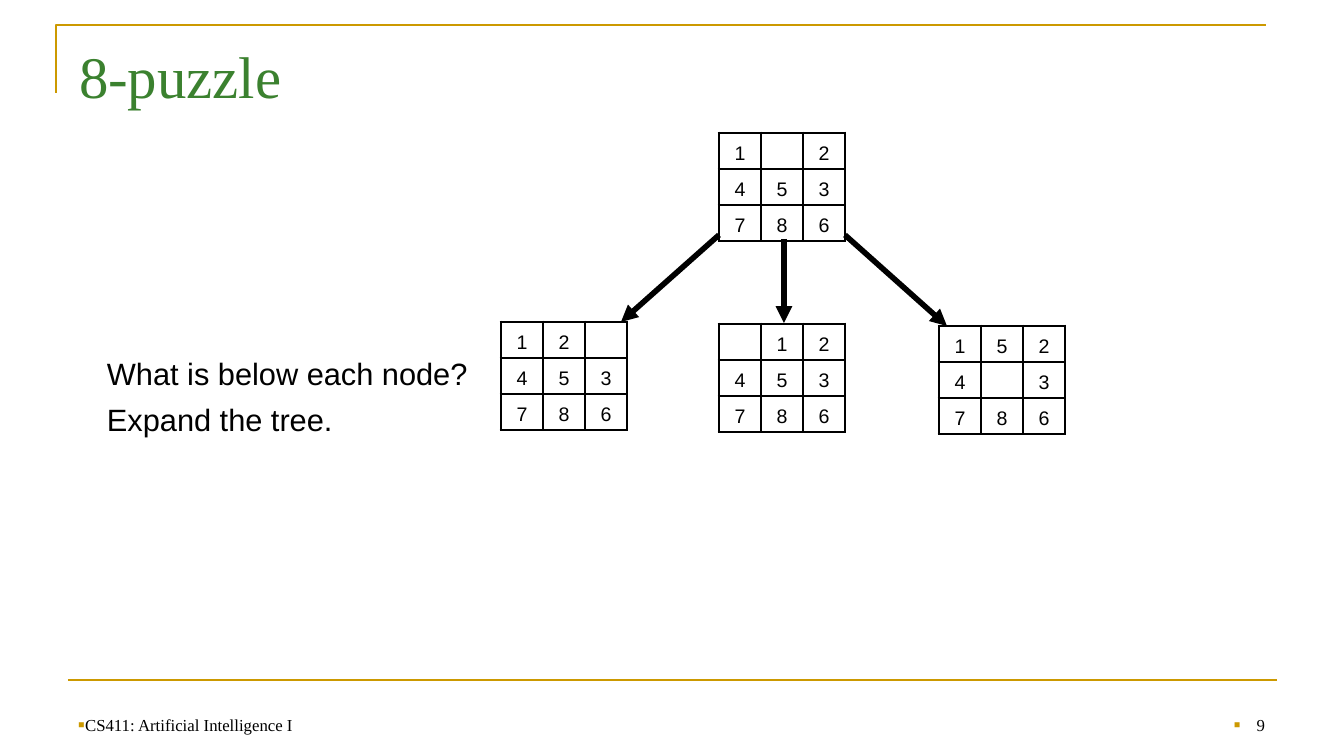
"""Build the 8-puzzle search tree slide."""
from dataclasses import dataclass

from lxml import etree
from pptx import Presentation
from pptx.dml.color import RGBColor
from pptx.enum.shapes import MSO_CONNECTOR
from pptx.enum.text import MSO_ANCHOR, PP_ALIGN
from pptx.oxml.ns import qn
from pptx.util import Pt

STRAIGHT = MSO_CONNECTOR.STRAIGHT
TOP, BOTTOM = MSO_ANCHOR.TOP, MSO_ANCHOR.BOTTOM
LEFT, CENTER, RIGHT = PP_ALIGN.LEFT, PP_ALIGN.CENTER, PP_ALIGN.RIGHT
SCALE = 914400 / 100.8
WIDE, HIGH = 1344, 756
TILE_W, TILE_H, SIDE = 42, 36, 3
THIN, THICK = 1, 2.25
COLORS = {"gold": "CC9900", "green": "3B812F", "black": "000000"}
FONTS = {
    "title": {"name": "Times New Roman", "size": Pt(42)},
    "foot": {"name": "Times New Roman", "size": Pt(12)},
    "body": {"name": "Arial", "size": Pt(22)},
    "tile": {"name": "Arial", "size": Pt(14)},
}
TILE_PARA = {"alignment": CENTER, "line_spacing": 1.24, "space_before": Pt(9)}


@dataclass
class Board:
    """A puzzle state, with a space for the empty tile."""
    left: int
    top: int
    rows: tuple[str, ...]


@dataclass
class Line:
    """A straight line, with or without an arrowhead."""
    start: tuple[int, int]
    end: tuple[int, int]
    color: str = "black"
    width: float = 4
    arrow: bool = True


@dataclass
class Label:
    """A text box with one style."""
    box: tuple[int, int, int, int]
    lines: tuple[str, ...]
    style: str
    color: str = "black"
    anchor: MSO_ANCHOR = TOP
    align: PP_ALIGN = LEFT
    inset: int = 5
    bullet: bool = False
    hang: int = 0


BOARDS = (
    Board(719, 133, ("1 2", "453", "786")),
    Board(939, 326, ("152", "4 3", "786")),
    Board(719, 324, (" 12", "453", "786")),
    Board(501, 322, ("12 ", "453", "786")),
)
LINES = (
    Line((68, 680), (1277, 680), "gold", 1.5, False),
    Line((845, 235), (947, 326)),
    Line((719, 235), (621, 322)),
    Line((784, 239), (784, 323)),
)
LABELS = (
    Label((69, 29, 1199, 125), ("8-puzzle",), "title", "green", inset=11),
    Label((68, 688, 423, 52), ("CS411: Artificial Intelligence I",), "foot",
          anchor=BOTTOM, bullet=True),
    Label((964, 688, 311, 52), ("9",), "foot", anchor=BOTTOM, align=RIGHT,
          bullet=True, hang=23),
    Label((97, 350, 405, 93), ("What is below each node?", "Expand the tree."),
          "body"),
)


def px(size: int) -> int:
    """Turn px into EMU."""
    return round(size * SCALE)


def tint(name: str) -> RGBColor:
    """Look up a colour."""
    return RGBColor.from_string(COLORS[name])


def assign(target, values: dict) -> None:
    """Set each named attribute."""
    for name, value in values.items():
        setattr(target, name, value)


def node(parent, tag: str, **attrs: str):
    """Add an XML child."""
    return etree.SubElement(parent, qn(f"a:{tag}"), attrs)


def write(para, text: str, style: str, color: str) -> None:
    """Add styled text to a paragraph."""
    run = para.add_run()
    run.text = text
    assign(run.font, FONTS[style])
    run.font.color.rgb = tint(color)


def mark(para, hang: int) -> None:
    """Give a paragraph a square bullet."""
    props = para._p.get_or_add_pPr()
    props.set("marL", str(px(hang)))
    props.set("indent", str(-px(hang)))
    node(node(props, "buClr"), "srgbClr", val=COLORS["gold"])
    node(props, "buSzPct", val="120000")
    node(props, "buFont", typeface="Arial")
    node(props, "buChar", char="▪")


def edge(cell, row: int, col: int) -> None:
    """Draw cell borders, thick on the outside."""
    props = cell._tc.get_or_add_tcPr()
    last = SIDE - 1
    outer = {"lnL": col == 0, "lnR": col == last,
             "lnT": row == 0, "lnB": row == last}
    for spot, (tag, thick) in enumerate(outer.items()):
        line = node(props, tag, w=str(Pt(THICK if thick else THIN)))
        node(node(line, "solidFill"), "srgbClr", val=COLORS["black"])
        props.insert(spot, line)


def draw_board(shapes, board: Board) -> None:
    """Draw a puzzle state as a table."""
    grid = shapes.add_table(SIDE, SIDE, px(board.left), px(board.top),
                            px(SIDE * TILE_W), px(SIDE * TILE_H)).table
    assign(grid, {"first_row": False, "horz_banding": False})
    for row, digits in enumerate(board.rows):
        grid.rows[row].height = px(TILE_H)
        grid.columns[row].width = px(TILE_W)
        for col, digit in enumerate(digits):
            cell = grid.cell(row, col)
            assign(cell, {"margin_left": px(9), "margin_right": px(9),
                          "margin_top": px(4), "margin_bottom": px(4)})
            cell.fill.background()
            edge(cell, row, col)
            para = cell.text_frame.paragraphs[0]
            assign(para, TILE_PARA)
            if digit.strip():
                write(para, digit, "tile", "black")
            else:
                node(para._p, "endParaRPr", sz="1400")


def draw_line(shapes, line: Line) -> None:
    """Draw a rule or an arrow."""
    link = shapes.add_connector(STRAIGHT, *map(px, line.start + line.end))
    link.line.color.rgb = tint(line.color)
    link.line.width = Pt(line.width)
    props = link._element.spPr
    if line.arrow:
        node(props.find(qn("a:ln")), "tailEnd", type="triangle")
    node(props, "effectLst")


def draw_label(shapes, label: Label) -> None:
    """Draw a text box."""
    frame = shapes.add_textbox(*map(px, label.box)).text_frame
    assign(frame, {"word_wrap": True, "vertical_anchor": label.anchor,
                   "margin_left": px(10), "margin_right": px(10),
                   "margin_top": px(label.inset), "margin_bottom": px(5)})
    for count, text in enumerate(label.lines):
        para = frame.add_paragraph() if count else frame.paragraphs[0]
        para.alignment = label.align
        if len(label.lines) > 1:
            para.space_before = Pt(6)
        if label.bullet:
            mark(para, label.hang)
        write(para, text, label.style, label.color)


def draw_frame(shapes) -> None:
    """Draw the gold corner around the title."""
    pen = shapes.build_freeform(px(56), px(93))
    pen.add_line_segments([(px(56), px(25)), (px(1266), px(25))], close=False)
    shape = pen.convert_to_shape()
    shape.shadow.inherit = False
    shape.fill.background()
    shape.line.color.rgb = tint("gold")
    shape.line.width = Pt(1.5)


def main() -> None:
    """Build and save the slide."""
    deck = Presentation()
    assign(deck, {"slide_width": px(WIDE), "slide_height": px(HIGH)})
    shapes = deck.slides.add_slide(deck.slide_layouts[6]).shapes
    draw_frame(shapes)
    for draw, items in ((draw_board, BOARDS), (draw_line, LINES),
                        (draw_label, LABELS)):
        for item in items:
            draw(shapes, item)
    deck.save("out.pptx")


if __name__ == "__main__":
    main()
